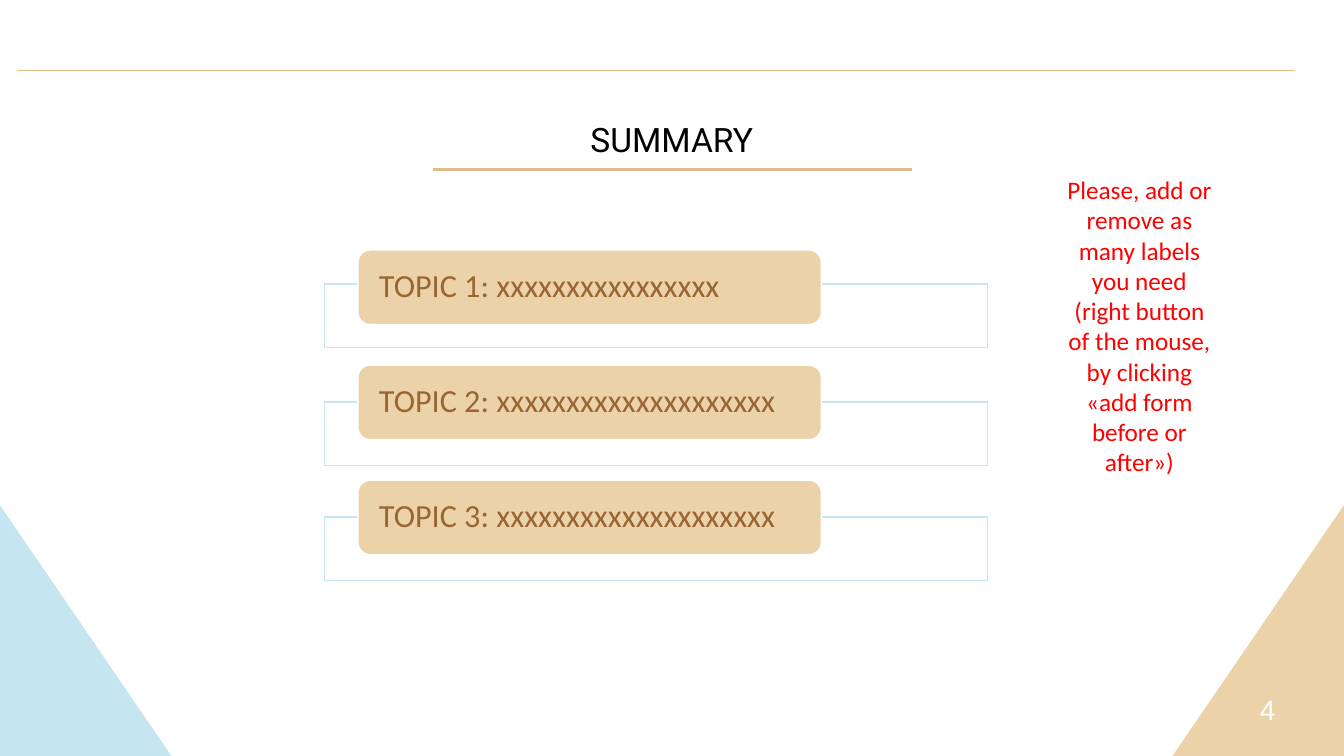
"""Build the summary slide with three topic labels."""
from lxml import etree
from pptx import Presentation
from pptx import util as u
from pptx.dml import color
from pptx.enum import shapes, text
from pptx.oxml import ns

COLORS = {
    "sand": "ECD2A9",
    "gold": "E0BB87",
    "sky": "C5E6F1",
    "white": "FFFFFF",
    "black": "000000",
    "brown": "996633",
    "red": "FF0000",
}
TOPICS = [
    ("TOPIC 1: xxxxxxxxxxxxxxxx", 7.16),
    ("TOPIC 2: xxxxxxxxxxxxxxxxxxxx", 10.13),
    ("TOPIC 3: xxxxxxxxxxxxxxxxxxxx", 13.03),
]
LABEL_TOP, LABEL_PITCH = 6.3, 2.9


def rgb(name):
    return color.RGBColor.from_string(COLORS[name])


def lengths(values):
    return [u.Cm(value) for value in values]


def add_block(slide, kind, box, fill, line=None):
    shape = slide.shapes.add_shape(kind, *lengths(box))
    shape.shadow.inherit = False
    shape.fill.solid()
    shape.fill.fore_color.rgb = rgb(fill)
    if line:
        shape.line.color.rgb = rgb(line)
        shape.line.width = u.Pt(1)
    else:
        shape.line.fill.background()
    return shape


def add_corner(slide, left, fill, flipped=False):
    box = (left, 12.73, 4.32, 6.32)
    shape = add_block(slide, shapes.MSO_SHAPE.RIGHT_TRIANGLE, box, fill)
    if flipped:
        shape._element.spPr.xfrm.set("flipH", "1")


def add_rule(slide, left, right, top, width):
    ends = lengths((left, top, right, top))
    line = slide.shapes.add_connector(shapes.MSO_CONNECTOR.STRAIGHT, *ends)
    line.line.color.rgb = rgb("gold")
    line.line.width = u.Pt(width)
    etree.SubElement(line._element.spPr, ns.qn("a:effectLst"))


def write(shape, words, font, size, ink, align, spacing=1.0):
    frame = shape.text_frame
    frame.word_wrap = True
    frame.text = words
    paragraph = frame.paragraphs[0]
    paragraph.alignment = align
    paragraph.line_spacing = spacing
    for run in paragraph.runs:
        run.font.name = font
        run.font.size = u.Pt(size)
        run.font.color.rgb = rgb(ink)


def add_text(slide, box, words, font, size, ink, spacing=1.0, grow=False):
    shape = slide.shapes.add_textbox(*lengths(box))
    write(shape, words, font, size, ink, text.PP_ALIGN.CENTER, spacing)
    if grow:
        shape.text_frame.auto_size = text.MSO_AUTO_SIZE.SHAPE_TO_FIT_TEXT


def add_topic(slide, words, frame_top, label_top):
    frame_box = (8.18, frame_top, 16.71, 1.6)
    frame = add_block(slide, shapes.MSO_SHAPE.RECTANGLE, frame_box, "white", "sky")
    tint = frame._element.spPr.find(ns.qn("a:solidFill"))[0]
    etree.SubElement(tint, ns.qn("a:alpha"), val="90000")

    label_box = (9.02, label_top, 11.68, 1.88)
    label = add_block(slide, shapes.MSO_SHAPE.ROUNDED_RECTANGLE, label_box, "sand", "white")
    write(label, words, "Calibri", 23, "brown", text.PP_ALIGN.LEFT, 0.9)
    label_frame = label.text_frame
    label_frame.vertical_anchor = text.MSO_ANCHOR.MIDDLE
    label_frame.margin_left = label_frame.margin_right = u.Cm(0.44)
    label_frame.margin_top = label_frame.margin_bottom = 0


def main():
    presentation = Presentation()
    presentation.slide_width = u.Cm(33.87)
    presentation.slide_height = u.Cm(19.05)
    slide = presentation.slides.add_slide(presentation.slide_layouts[6])

    add_corner(slide, 29.55, "sand", flipped=True)
    add_text(slide, (30.84, 17.32, 2.21, 0.89), "4", "Arial", 20, "white")
    add_corner(slide, 0, "sky")
    add_rule(slide, 0.43, 32.64, 1.78, 0.75)

    add_text(slide, (8.46, 2.72, 16.94, 1.32), "SUMMARY", "Roboto", 24, "black", 1.15, True)
    add_rule(slide, 10.9, 22.99, 4.27, 2.25)

    for index, (words, frame_top) in enumerate(TOPICS):
        add_topic(slide, words, frame_top, LABEL_TOP + index * LABEL_PITCH)

    hint = (
        "Please, add or remove as many labels you need "
        "(right button of the mouse, by clicking «add form before or after»)"
    )
    add_text(slide, (26.62, 4.27, 4.19, 7.95), hint, "Calibri", 18, "red", grow=True)
    presentation.save("out.pptx")


if __name__ == "__main__":
    main()
